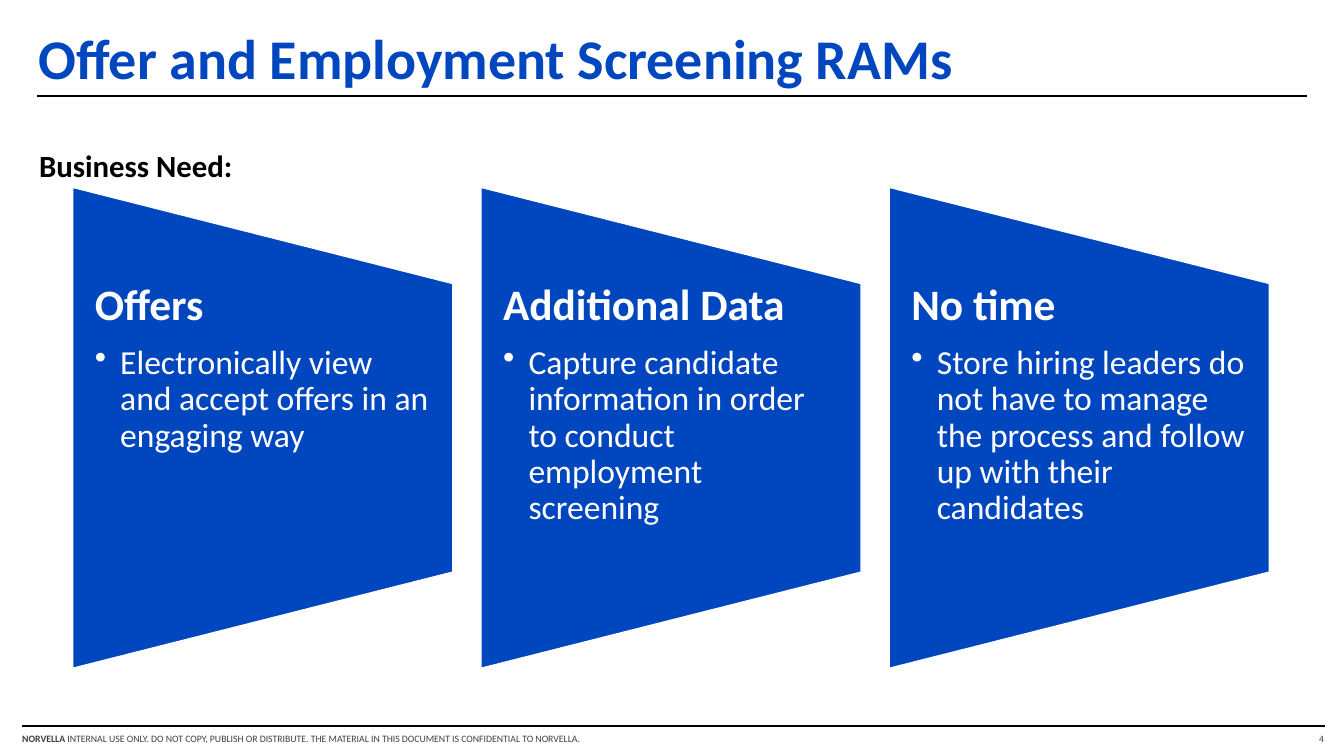
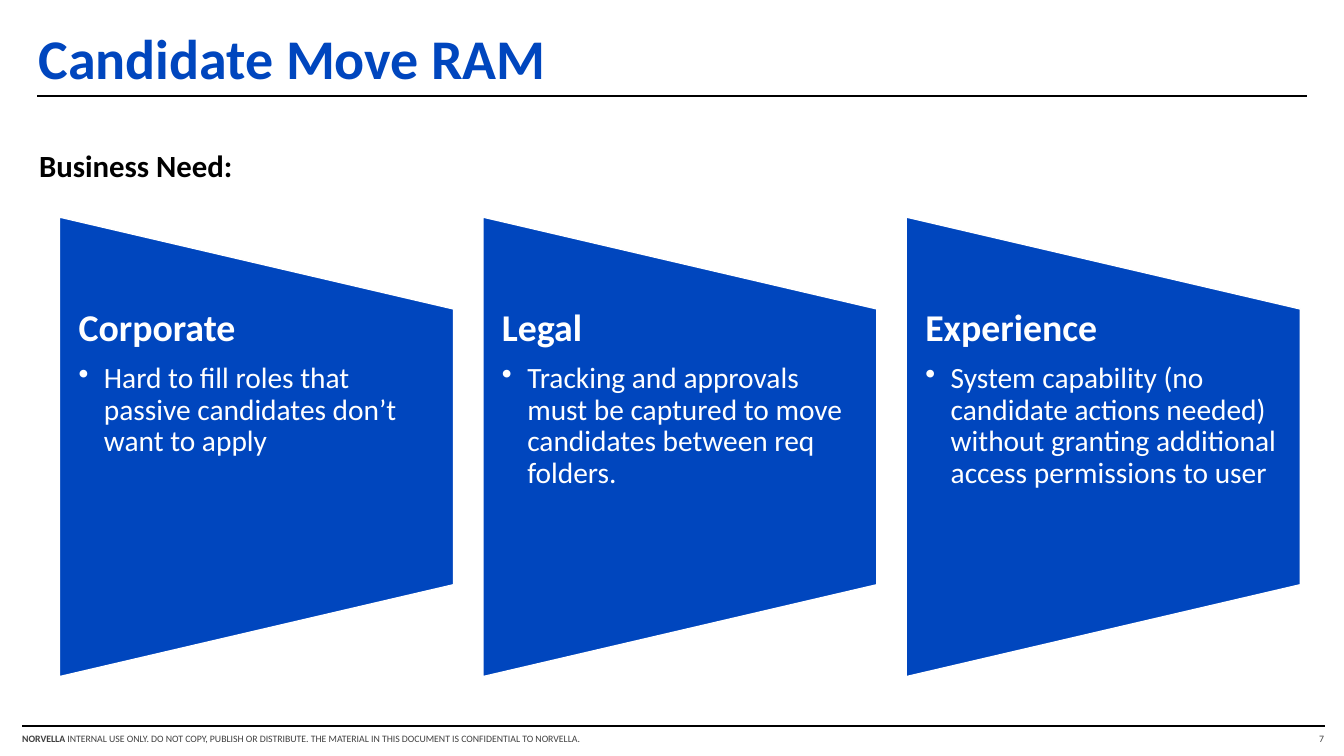
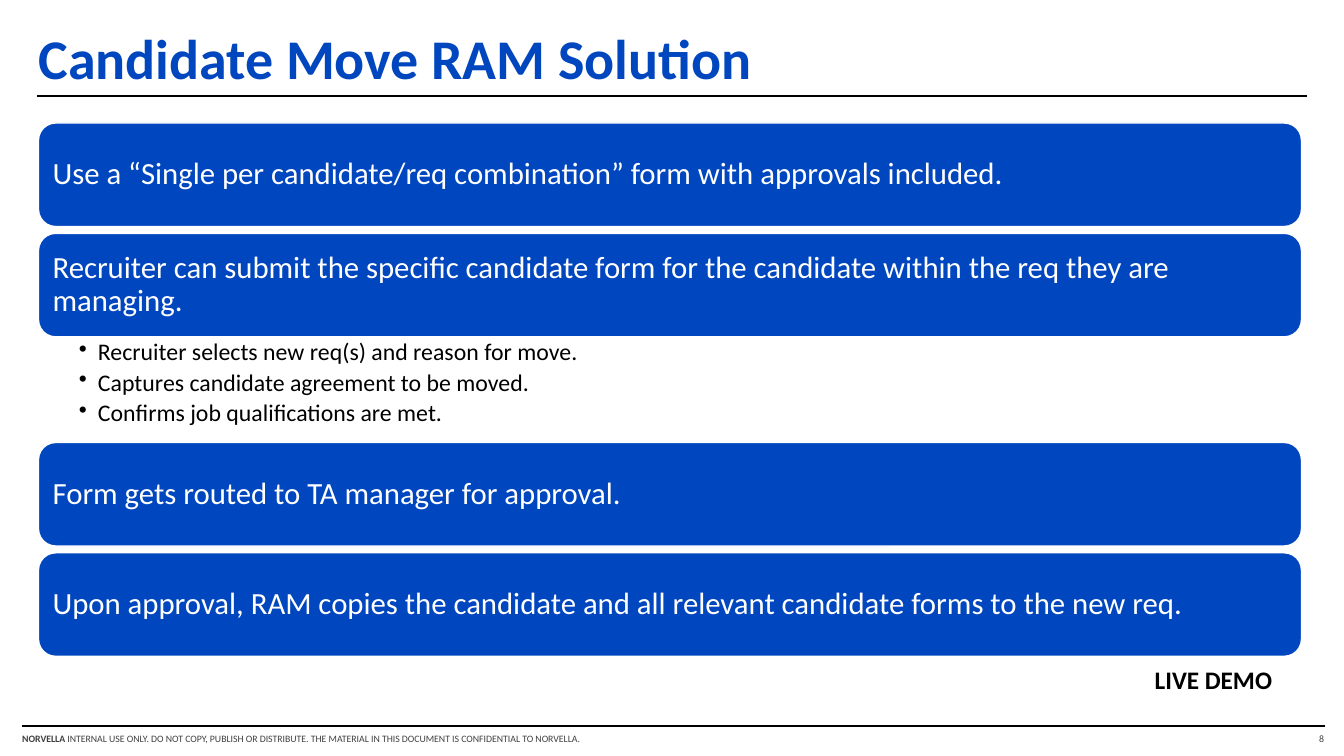
from lxml.etree import SubElement
from pptx import Presentation
from pptx.dml.color import RGBColor
from pptx.enum.shapes import MSO_CONNECTOR, MSO_SHAPE as Shape
from pptx.enum.text import MSO_ANCHOR as Anchor, MSO_AUTO_SIZE as AutoSize, PP_ALIGN as Align
from pptx.oxml.ns import qn
from pptx.util import Cm, Pt

FONT = "Calibri"
BLUE, BLACK, WHITE, GREY = "0046BE", "000000", "FFFFFF", "404040"
TITLE_ONLY = 5
COMPANY = "NORVELLA"
NOTICE = ("INTERNAL USE ONLY. DO NOT COPY, PUBLISH OR DISTRIBUTE. "
          f"THE MATERIAL IN THIS DOCUMENT IS CONFIDENTIAL TO {COMPANY}.")

OFFER_NEEDS = [
    ("Offers", "Electronically view and accept offers in an engaging way"),
    ("Additional Data", "Capture candidate information in order to conduct employment screening"),
    ("No time", "Store hiring leaders do not have to manage the process and follow up "
                "with their candidates"),
]
MOVE_NEEDS = [
    ("Corporate", "Hard to fill roles that passive candidates don’t want to apply"),
    ("Legal", "Tracking and approvals must be captured to move candidates between req folders."),
    ("Experience", "System capability (no candidate actions needed) without granting "
                   "additional access permissions to user"),
]
MOVE_STEPS = [
    ("Use a “Single per candidate/req combination” form with approvals included.", []),
    ("Recruiter can submit the specific candidate form for the candidate within the req "
     "they are managing.",
     ["Recruiter selects new req(s) and reason for move.",
      "Captures candidate agreement to be moved.",
      "Confirms job qualifications are met."]),
    ("Form gets routed to TA manager for approval.", []),
    ("Upon approval, RAM copies the candidate and all relevant candidate forms "
     "to the new req.", []),
]


def color(value):
    """Turn a hex string into a colour."""
    return RGBColor.from_string(value)


def style_span(span, size, ink, bold=False):
    """Set the font of one run."""
    span.font.name = FONT
    span.font.size = Pt(size)
    span.font.bold = bold
    span.font.color.rgb = color(ink)


def style_para(para, size, ink, bold=False, spacing=None, after=0, align=Align.LEFT):
    """Set the spacing of a paragraph and the font of its runs."""
    para.alignment = align
    para.line_spacing = spacing
    para.space_after = Pt(round(size * after, 1))
    for span in para.runs:
        style_span(span, size, ink, bold)


def add_bullet(para, indent):
    """Give a paragraph a hanging bullet."""
    properties = para._p.get_or_add_pPr()
    properties.set("marL", str(Cm(indent)))
    properties.set("indent", str(-Cm(indent)))
    SubElement(properties, qn("a:buChar")).set("char", "•")


def set_frame(frame, margins=(0, 0, 0, 0), anchor=Anchor.TOP):
    """Set wrapping, insets and anchor of a text frame."""
    frame.word_wrap = True
    frame.auto_size = AutoSize.NONE
    frame.vertical_anchor = anchor
    (frame.margin_left, frame.margin_top,
     frame.margin_right, frame.margin_bottom) = map(Cm, margins)


def add_text(page, area, text, margins=(0, 0, 0, 0)):
    """Add a wrapping text box and return its frame."""
    frame = page.shapes.add_textbox(*map(Cm, area)).text_frame
    set_frame(frame, margins)
    frame.text = text
    return frame


def add_rule(page, left, right, top):
    """Draw a thin horizontal line."""
    rule = page.shapes.add_connector(
        MSO_CONNECTOR.STRAIGHT, Cm(left), Cm(top), Cm(right), Cm(top))
    rule.line.color.rgb = color(BLACK)
    rule.line.width = Pt(1.25)
    SubElement(rule._element.spPr, qn("a:effectLst"))


def add_block(page, kind, area):
    """Add a blue shape with a white outline."""
    block = page.shapes.add_shape(kind, *map(Cm, area))
    block.shadow.inherit = False
    block.fill.solid()
    block.fill.fore_color.rgb = color(BLUE)
    block.line.color.rgb = color(WHITE)
    block.line.width = Pt(1)
    return block


def add_page(deck, title, number):
    """Add a slide with its title, rules and footer."""
    page = deck.slides.add_slide(deck.slide_layouts[TITLE_ONLY])
    add_rule(page, 0.94, 32.94, 2.41)
    add_rule(page, 0.56, 33.38, 18.29)
    heading = page.shapes.title
    heading.left, heading.top, heading.width, heading.height = map(Cm, (0.97, 0.81, 32, 1.55))
    set_frame(heading.text_frame, anchor=Anchor.MIDDLE)
    heading.text_frame.text = title
    style_para(heading.text_frame.paragraphs[0], 40, BLUE, True, 0.8)
    footer = add_text(page, (0.56, 18.47, 19.76, 0.41), f"{COMPANY} ").paragraphs[0]
    style_para(footer, 7, GREY, True)
    notice = footer.add_run()
    notice.text = NOTICE
    style_span(notice, 7, GREY)
    label = add_text(page, (32.77, 18.47, 0.6, 0.41), str(number)).paragraphs[0]
    style_para(label, 7, GREY, align=Align.RIGHT)
    return page


def add_card(page, area, need, sizes, margin):
    """Add a tapered card with a heading and a bullet."""
    left, top, width, height = area
    card = add_block(page, Shape.FLOWCHART_MANUAL_OPERATION,
                     (left + (width - height) / 2, top + (height - width) / 2, height, width))
    card.rotation = 270
    body = (left, top + height / 5, width, height * 3 / 5)
    frame = add_text(page, body, "\n".join(need), (margin, 0, margin, 0))
    heading, detail = frame.paragraphs
    style_para(heading, sizes[0], WHITE, True, 0.9, 0.35)
    style_para(detail, sizes[1], WHITE, False, 0.9, 0.15)
    add_bullet(detail, 0.64)


def add_needs_page(deck, title, number, needs, area, gap, sizes, margin):
    """Add a slide with a row of equal cards inside an area."""
    page = add_page(deck, title, number)
    lead = add_text(page, (0.99, 3.81, 31.95, 1.2), "Business Need:")
    style_para(lead.paragraphs[0], 22, BLACK, True, 0.9)
    left, top, width, height = area
    card_width = (width - gap * (len(needs) - 1)) / len(needs)
    for index, need in enumerate(needs):
        card_left = left + index * (card_width + gap)
        add_card(page, (card_left, top, card_width, height), need, sizes, margin)


def add_step(page, area, text):
    """Add a rounded panel that holds one step."""
    panel = add_block(page, Shape.ROUNDED_RECTANGLE, area)
    set_frame(panel.text_frame, (0.23,) * 4, Anchor.MIDDLE)
    panel.text_frame.text = text
    style_para(panel.text_frame.paragraphs[0], 22, WHITE, spacing=0.9)


def add_notes_list(page, area, notes):
    """Add the bullets that belong to a step."""
    frame = add_text(page, area, "\n".join(notes), (1.02, 0.08, 0.43, 0.08))
    for para in frame.paragraphs:
        style_para(para, 17, BLACK, False, 0.9, 0.2)
        add_bullet(para, 0.48)


def add_steps_page(deck, title, number, steps, closing):
    """Add a slide with a column of steps and a closing label."""
    page = add_page(deck, title, number)
    left, top, width = 0.97, 3.1, 31.83
    step_height, notes_height, gap = 2.61, 2.66, 0.17
    for text, notes in steps:
        add_step(page, (left, top, width, step_height), text)
        top += step_height
        if notes:
            add_notes_list(page, (left, top, width, notes_height), notes)
        top += notes_height if notes else gap
    label = add_text(page, (28.85, 16.61, 3.91, 1.02), closing, (0.25, 0.13, 0.25, 0.13))
    label.word_wrap = False
    style_para(label.paragraphs[0], 18, BLACK, True)


def main():
    """Build the deck and save it."""
    deck = Presentation()
    deck.slide_width, deck.slide_height = Cm(33.87), Cm(19.05)
    add_needs_page(deck, "Offer and Employment Screening RAMs", 4, OFFER_NEEDS,
                   (1.83, 4.72, 30.16, 12.12), 0.71, (31, 24), 0.56)
    add_needs_page(deck, "Candidate Move RAM", 7, MOVE_NEEDS,
                   (1.5, 5.47, 31.27, 11.58), 0.74, (27, 21), 0.48)
    add_steps_page(deck, "Candidate Move RAM Solution", 8, MOVE_STEPS, "LIVE DEMO")
    deck.save("out.pptx")


if __name__ == "__main__":
    main()
